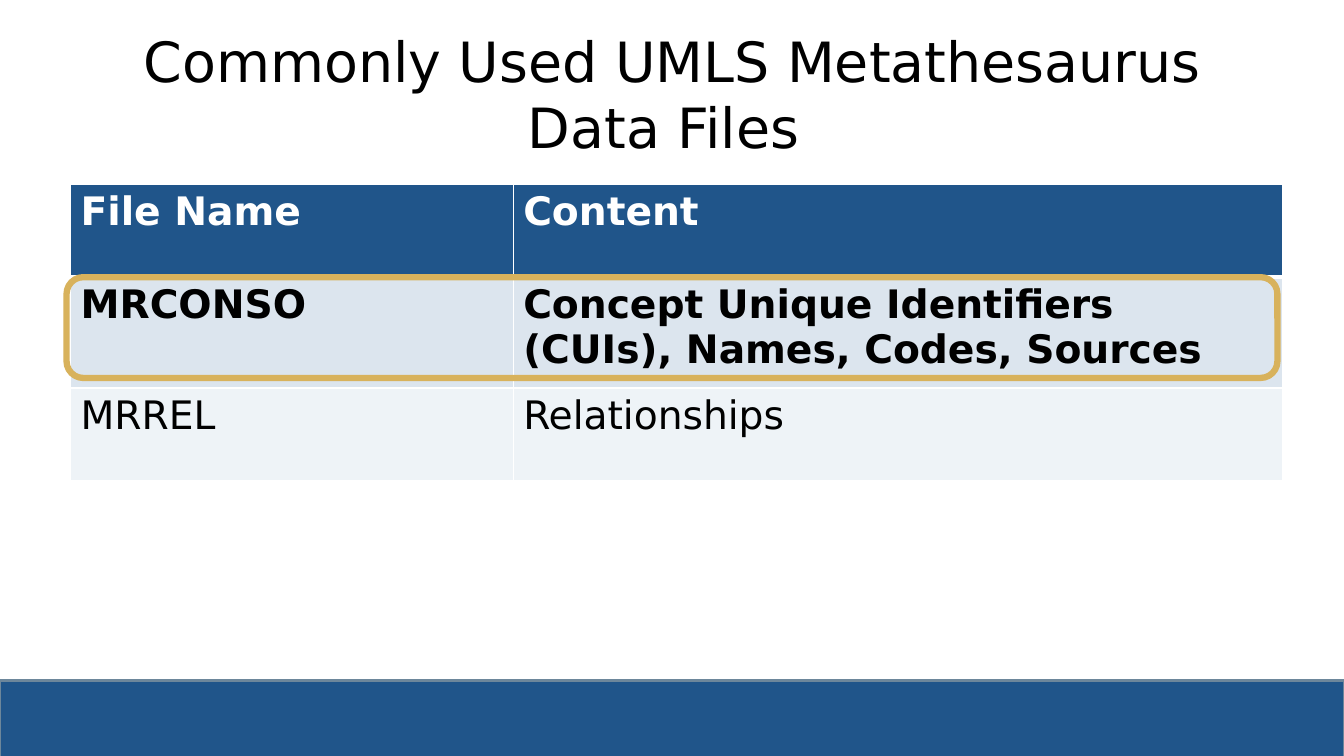
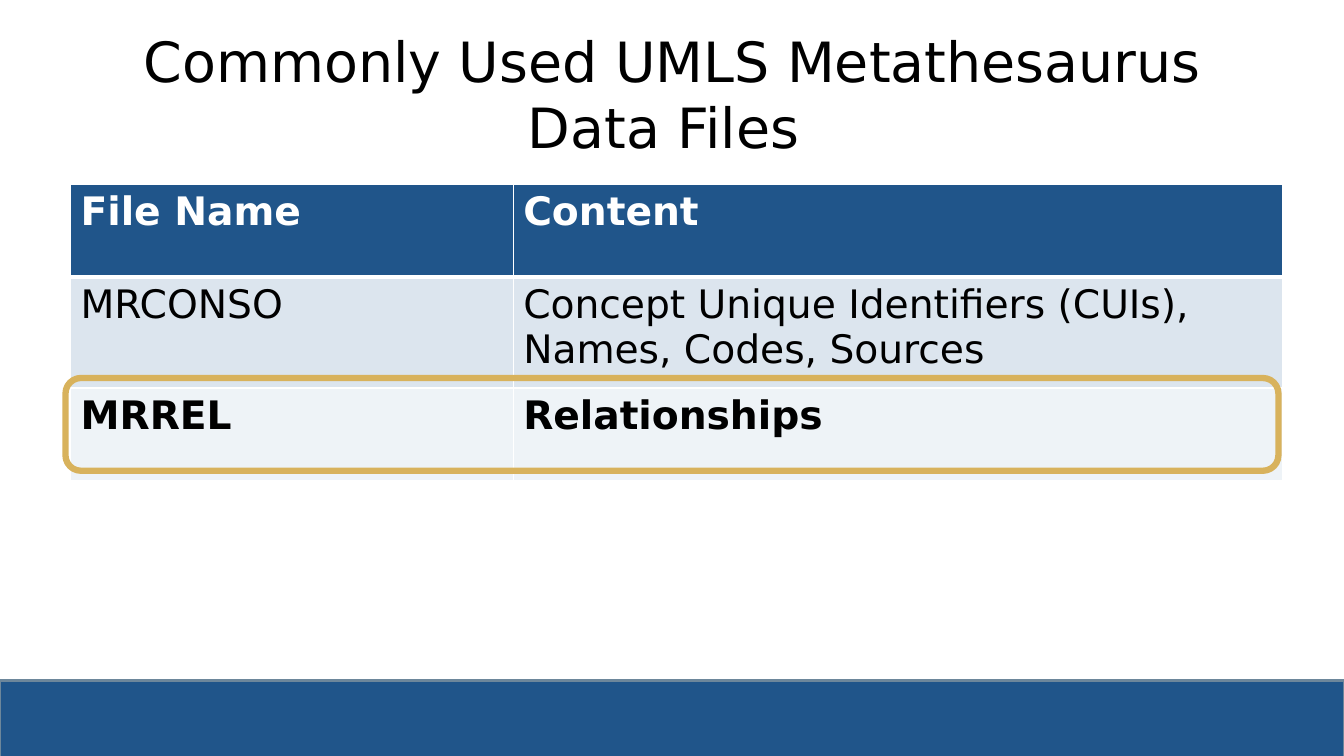
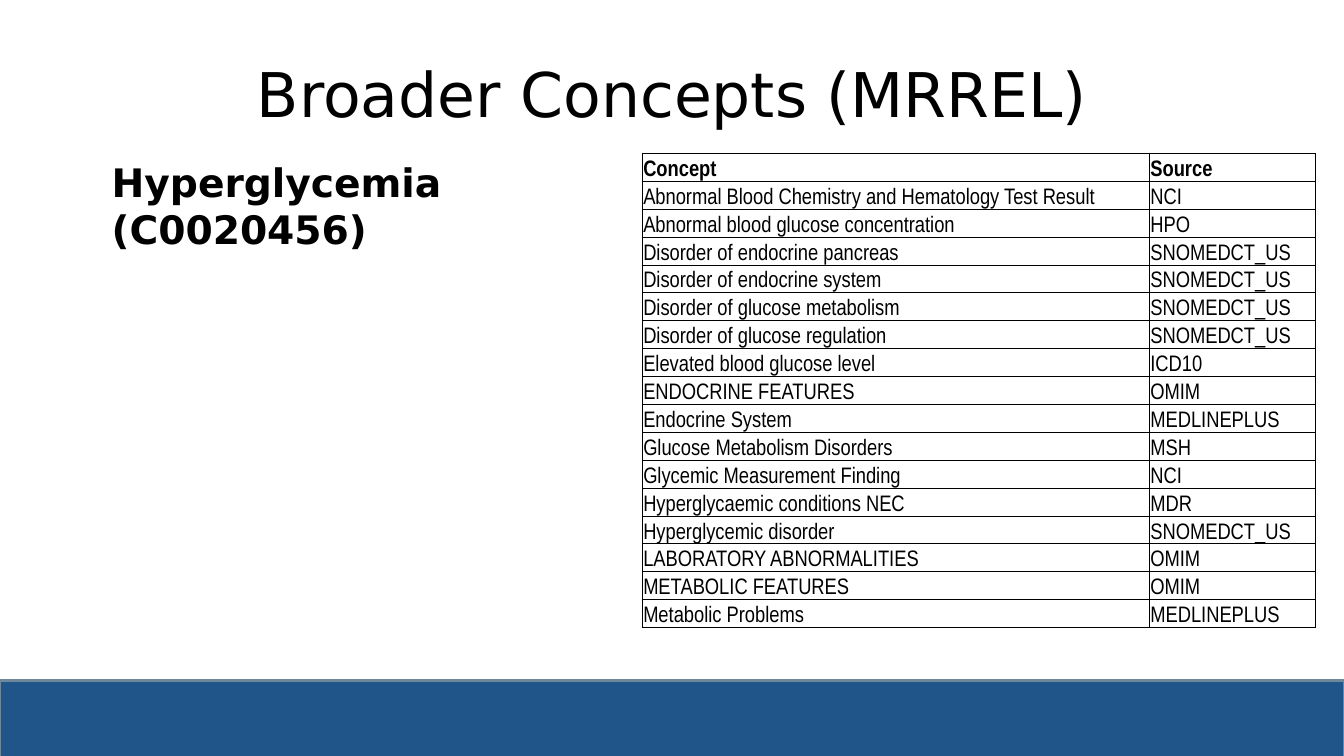
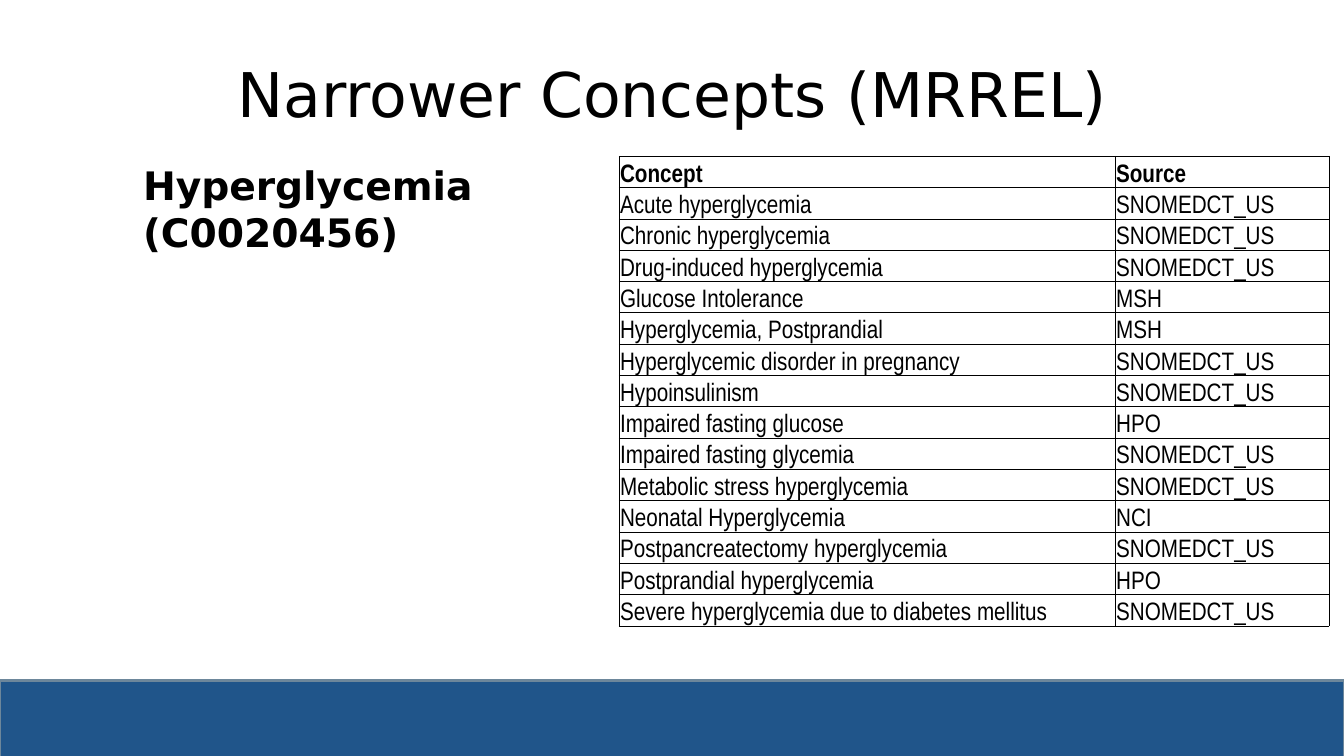
from dataclasses import dataclass

from lxml import etree
from pptx import Presentation
from pptx.dml.color import RGBColor
from pptx.enum.shapes import MSO_SHAPE
from pptx.enum.text import MSO_ANCHOR, MSO_AUTO_SIZE, PP_ALIGN
from pptx.oxml.ns import qn
from pptx.util import Inches, Pt

RECT, ROUND_RECT = MSO_SHAPE.RECTANGLE, MSO_SHAPE.ROUNDED_RECTANGLE
TOP, MIDDLE, BOTTOM = MSO_ANCHOR.TOP, MSO_ANCHOR.MIDDLE, MSO_ANCHOR.BOTTOM
CENTER, LEFT = PP_ALIGN.CENTER, PP_ALIGN.LEFT
NO_FIT, GROW = MSO_AUTO_SIZE.NONE, MSO_AUTO_SIZE.SHAPE_TO_FIT_TEXT


@dataclass(frozen=True)
class Theme:
    blue: str = "20558A"
    band_line: str = "6D879B"
    gold: str = "D8B25C"
    white: str = "FFFFFF"
    black: str = "000000"
    rows: tuple = ("DCE5EE", "EEF3F7")
    font: str = "DejaVu Sans"
    narrow: str = "Arial Narrow"
    title_size: float = 44
    long_title_size: float = 39.6
    text_size: float = 28


T = Theme()

# Content
FILES_TITLE = "Commonly Used UMLS Metathesaurus Data Files "
FILES = [
    ("File Name", "Content"),
    ("MRCONSO", "Concept Unique Identifiers (CUIs), Names, Codes, Sources"),
    ("MRREL", "Relationships"),
]
FILE_SLIDES = [  # highlighted row, position of its frame
    (1, (0.66, 2.75, 12.01, 1)),
    (2, (0.65, 3.75, 12.03, 0.92)),
]
FILE_COLS, FILE_ROWS = (4.39, 7.63), (0.92, 1.1, 0.92)

SUBJECT = "Hyperglycemia\n(C0020456)"
HEADER = ("Concept", "Source")
CONCEPT_SLIDES = [
    dict(title="Broader Concepts (MRREL)", subject_at=(1.01, 1.52, 3.57, 1.04),
         table_at=(6.37, 1.52), cols=(5.03, 1.65), height=4.71, size=16, rows=[
             ("Abnormal Blood Chemistry and Hematology Test Result", "NCI"),
             ("Abnormal blood glucose concentration", "HPO"),
             ("Disorder of endocrine pancreas", "SNOMEDCT_US"),
             ("Disorder of endocrine system", "SNOMEDCT_US"),
             ("Disorder of glucose metabolism", "SNOMEDCT_US"),
             ("Disorder of glucose regulation", "SNOMEDCT_US"),
             ("Elevated blood glucose level", "ICD10"),
             ("ENDOCRINE FEATURES", "OMIM"),
             ("Endocrine System", "MEDLINEPLUS"),
             ("Glucose Metabolism Disorders", "MSH"),
             ("Glycemic Measurement Finding", "NCI"),
             ("Hyperglycaemic conditions NEC", "MDR"),
             ("Hyperglycemic disorder", "SNOMEDCT_US"),
             ("LABORATORY ABNORMALITIES", "OMIM"),
             ("METABOLIC FEATURES", "OMIM"),
             ("Metabolic Problems", "MEDLINEPLUS"),
         ]),
    dict(title="Narrower Concepts (MRREL)", subject_at=(1.32, 1.55, 3.61, 1.04),
         table_at=(6.14, 1.55), cols=(4.92, 2.12), height=4.66, size=18, rows=[
             ("Acute hyperglycemia", "SNOMEDCT_US"),
             ("Chronic hyperglycemia", "SNOMEDCT_US"),
             ("Drug-induced hyperglycemia", "SNOMEDCT_US"),
             ("Glucose Intolerance", "MSH"),
             ("Hyperglycemia, Postprandial", "MSH"),
             ("Hyperglycemic disorder in pregnancy", "SNOMEDCT_US"),
             ("Hypoinsulinism", "SNOMEDCT_US"),
             ("Impaired fasting glucose", "HPO"),
             ("Impaired fasting glycemia", "SNOMEDCT_US"),
             ("Metabolic stress hyperglycemia", "SNOMEDCT_US"),
             ("Neonatal Hyperglycemia", "NCI"),
             ("Postpancreatectomy hyperglycemia", "SNOMEDCT_US"),
             ("Postprandial hyperglycemia", "HPO"),
             ("Severe hyperglycemia due to diabetes mellitus", "SNOMEDCT_US"),
         ]),
]


# Helpers
def inches(values):
    return [Inches(v) for v in values]


def rgb(color):
    return RGBColor.from_string(color)


def write(tf, text, size, font=T.font, color=T.black, bold=False, align=LEFT):
    tf.text = text
    for p in tf.paragraphs:
        p.alignment = align
        for r in p.runs:
            r.font.name, r.font.size, r.font.bold = font, Pt(size), bold
            r.font.color.rgb = rgb(color)


def add_box(s, kind, at, line, width, fill=None):
    sp = s.shapes.add_shape(kind, *inches(at))
    sp.shadow.inherit = False
    if fill:
        sp.fill.solid()
        sp.fill.fore_color.rgb = rgb(fill)
    else:
        sp.fill.background()
    sp.line.color.rgb = rgb(line)
    sp.line.width = Pt(width)
    return sp


def set_borders(cell, color, **widths):
    tcPr = cell._tc.get_or_add_tcPr()
    for side in "LRTB":
        ln = etree.SubElement(tcPr, qn(f"a:ln{side}"), w=str(Pt(widths[side])))
        fill = etree.SubElement(ln, qn("a:solidFill"))
        etree.SubElement(fill, qn("a:srgbClr"), val=color)


def add_grid(s, at, cols, heights, rows, style_cell):
    frame = s.shapes.add_table(len(rows), len(cols),
                               *inches((*at, sum(cols), sum(heights))))
    table = frame.table
    table.first_row = table.horz_banding = False
    for column, width in zip(table.columns, cols):
        column.width = Inches(width)
    for i, (row, height) in enumerate(zip(rows, heights)):
        table.rows[i].height = Inches(height)
        for j, text in enumerate(row):
            style_cell(table.cell(i, j), i, text)


def add_slide(prs, title, size):
    s = prs.slides.add_slide(prs.slide_layouts.get_by_name("Title Only"))
    sp = s.shapes.title
    sp.left, sp.top, sp.width, sp.height = inches((0.67, 0.3, 12, 1.25))
    tf = sp.text_frame
    write(tf, title, size, align=CENTER)
    tf.vertical_anchor, tf.auto_size, tf.word_wrap = MIDDLE, NO_FIT, True
    return s


def add_master_band(prs, s):
    band = add_box(s, RECT, (0, 6.75, 13.33, 0.83), T.band_line, 2, T.blue)
    prs.slide_master.shapes.element.insert(2, band.element)


# Slide kinds
def add_file_slide(prs, highlighted, frame_at):
    s = add_slide(prs, FILES_TITLE, T.long_title_size)

    def style_cell(cell, i, text):
        header = i == 0
        set_borders(cell, T.white, L=1, R=1, T=3 if i == 1 else 1, B=3 if header else 1)
        cell.fill.solid()
        cell.fill.fore_color.rgb = rgb(T.blue if header else T.rows[i - 1])
        cell.vertical_anchor = TOP
        write(cell.text_frame, text, T.text_size,
              color=T.white if header else T.black, bold=i in (0, highlighted))

    add_grid(s, (0.7, 1.83), FILE_COLS, FILE_ROWS, FILES, style_cell)
    add_box(s, ROUND_RECT, frame_at, T.gold, 4.5)
    return s


def add_concept_slide(prs, title, subject_at, table_at, cols, height, size, rows):
    s = add_slide(prs, title, T.title_size)
    tf = s.shapes.add_textbox(*inches(subject_at)).text_frame
    tf.word_wrap, tf.auto_size = True, GROW
    write(tf, SUBJECT, T.text_size, bold=True)

    def style_cell(cell, i, text):
        set_borders(cell, T.black, L=0.5, R=0.5, T=0.5, B=0.5)
        cell.fill.background()
        cell.vertical_anchor = BOTTOM
        cell.margin_left = cell.margin_right = cell.margin_top = Inches(0.01)
        cell.margin_bottom = 0
        write(cell.text_frame, text, size, T.narrow, bold=i == 0)

    rows = [HEADER, *rows]
    heights = [height / len(rows)] * len(rows)
    add_grid(s, table_at, cols, heights, rows, style_cell)


def main():
    prs = Presentation()
    prs.slide_width, prs.slide_height = inches((13.33, 7.5))
    for highlighted, frame_at in FILE_SLIDES:
        add_file_slide(prs, highlighted, frame_at)
    for concept in CONCEPT_SLIDES:
        add_concept_slide(prs, **concept)
    add_master_band(prs, prs.slides[0])
    prs.save("out.pptx")


if __name__ == "__main__":
    main()
